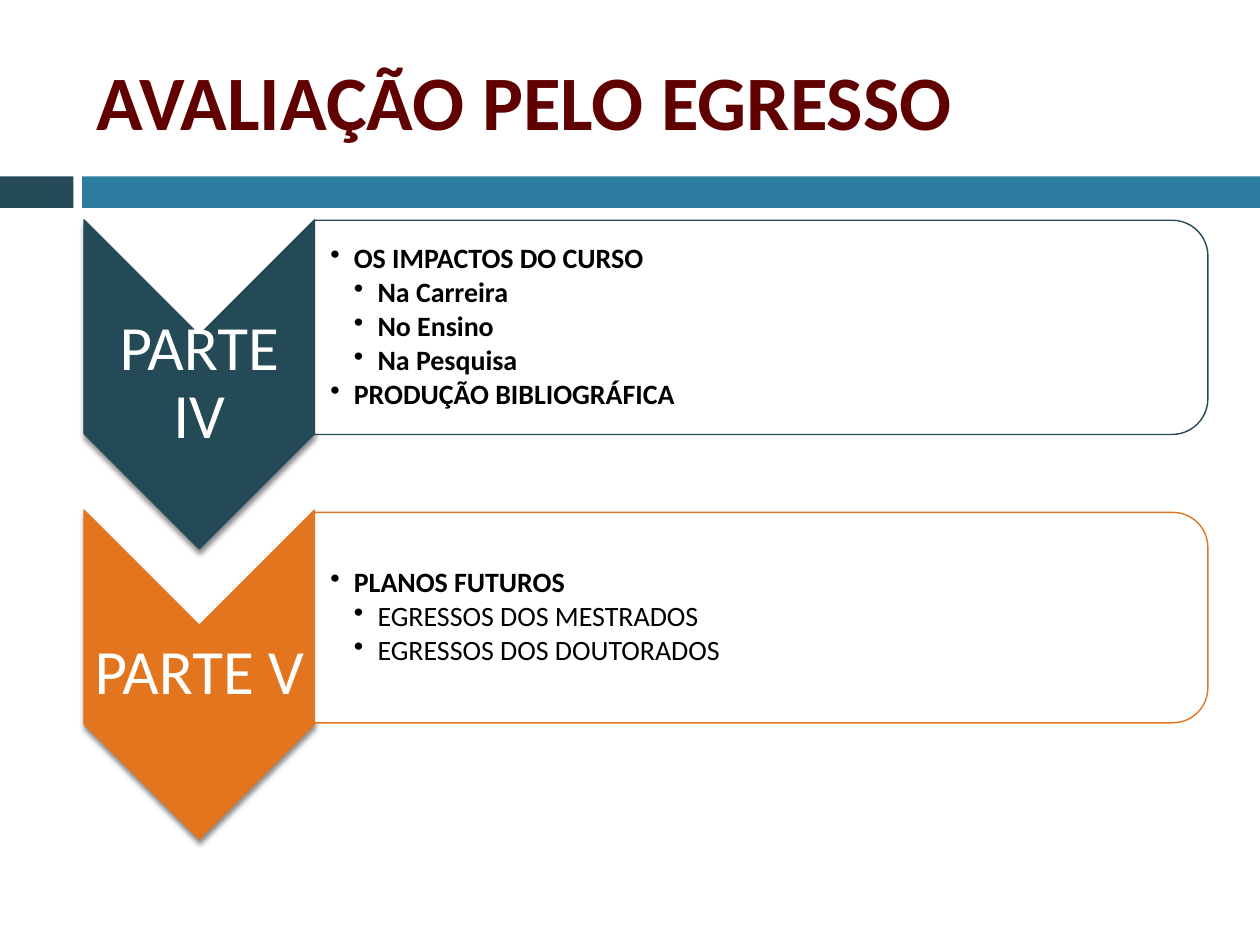
from dataclasses import dataclass

from lxml.etree import SubElement
from pptx import Presentation
from pptx.dml.color import RGBColor
from pptx.enum.shapes import MSO_SHAPE
from pptx.enum.text import MSO_ANCHOR, PP_ALIGN
from pptx.oxml.ns import qn
from pptx.util import Pt

TEAL = RGBColor(0x24, 0x4A, 0x58)
BLUE = RGBColor(0x2C, 0x7C, 0x9F)
ORANGE = RGBColor(0xE2, 0x75, 0x1D)
MAROON = RGBColor(0x60, 0x00, 0x00)
WHITE = RGBColor(0xFF, 0xFF, 0xFF)
BLACK = RGBColor(0x00, 0x00, 0x00)

FONT = "Calibri"
BULLET_INDENT = 13.5
CHEVRON_WIDTH = 131.75
CHEVRON_HEIGHT = 188
LABEL_HEIGHT = 56


@dataclass
class Box:
    left: float
    top: float
    width: float
    height: float

    def lengths(self):
        return [Pt(n) for n in (self.left, self.top, self.width, self.height)]

    def turned(self):
        """The box which covers this one after a quarter turn."""
        shift = (self.width - self.height) / 2
        return Box(self.left + shift, self.top - shift, self.height, self.width)


def add_text(para, text, size, color, bold=False, align=PP_ALIGN.LEFT,
             level=0, line=None, after=None):
    para.alignment = align
    para.level = level
    para.line_spacing = line
    if after is not None:
        para.space_after = Pt(after)
    span = para.add_run()
    span.text = text
    span.font.name = FONT
    span.font.size = Pt(size)
    span.font.bold = bold
    span.font.color.rgb = color


def add_bullet(para):
    """Hang a bullet at the indent of the paragraph's level."""
    props = para._p.get_or_add_pPr()
    props.set("marL", str(Pt(BULLET_INDENT * para.level)))
    props.set("indent", str(-Pt(BULLET_INDENT)))
    SubElement(props, qn("a:buChar"), char="•")


def add_frame(shapes, box, insets):
    frame = shapes.add_textbox(*box.lengths()).text_frame
    frame.word_wrap = True
    frame.vertical_anchor = MSO_ANCHOR.MIDDLE
    (frame.margin_left, frame.margin_top,
     frame.margin_right, frame.margin_bottom) = [Pt(n) for n in insets]
    return frame


def add_block(shapes, kind, box, fill, line=None, quarter_turn=False):
    placed = box.turned() if quarter_turn else box
    shape = shapes.add_shape(kind, *placed.lengths())
    shape.rotation = 90 if quarter_turn else 0
    shape.shadow.inherit = False
    shape.fill.solid()
    shape.fill.fore_color.rgb = fill
    if line is None:
        shape.line.fill.background()
    else:
        shape.line.color.rgb = line
        shape.line.width = Pt(0.79)
    return shape


def add_alpha(color, percent):
    SubElement(color, qn("a:alpha"), val=str(percent * 1000))


def add_shadow(shape):
    effects = shape.element.spPr.find(qn("a:effectLst"))
    shadow = SubElement(effects, qn("a:outerShdw"), blurRad=str(Pt(3)),
                        dist=str(Pt(2.4)), dir="5400000", rotWithShape="0")
    add_alpha(SubElement(shadow, qn("a:srgbClr"), val=str(BLACK)), 45)


def add_header(page, text, box):
    title = page.shapes.title
    title.left, title.top, title.width, title.height = box.lengths()
    title.text_frame.vertical_anchor = MSO_ANCHOR.MIDDLE
    add_text(title.text_frame.paragraphs[0], text, 44, MAROON, bold=True)


def add_band(page, box):
    """Place a short dark bar and a long light bar, side by side."""
    short, gap = 42, 5
    start = short + gap
    add_block(page.shapes, MSO_SHAPE.RECTANGLE,
              Box(box.left, box.top, short, box.height), TEAL)
    add_block(page.shapes, MSO_SHAPE.RECTANGLE,
              Box(box.left + start, box.top, box.width - start, box.height), BLUE)


def add_part(page, box, label, color, items, panel_drop, panel_height):
    """Place a downward chevron with its label, and a panel of bullets."""
    shapes = page.shapes.add_group_shape().shapes
    chevron_box = Box(box.left, box.top, CHEVRON_WIDTH, CHEVRON_HEIGHT)
    add_shadow(add_block(shapes, MSO_SHAPE.CHEVRON, chevron_box, color,
                         line=color, quarter_turn=True))
    label_top = box.top + (CHEVRON_HEIGHT - LABEL_HEIGHT) / 2
    frame = add_frame(shapes, Box(box.left, label_top, CHEVRON_WIDTH, LABEL_HEIGHT),
                      (2, 2, 2, 2))
    add_text(frame.paragraphs[0], label, 36, WHITE, align=PP_ALIGN.CENTER, line=0.9)

    panel_box = Box(box.left + CHEVRON_WIDTH, box.top + panel_drop,
                    box.width - CHEVRON_WIDTH, panel_height)
    panel = add_block(shapes, MSO_SHAPE.ROUND_2_SAME_RECTANGLE, panel_box, WHITE,
                      line=color, quarter_turn=True)
    add_alpha(panel.element.spPr.find(qn("a:solidFill"))[0], 90)

    inset = 6
    frame = add_frame(shapes, Box(panel_box.left, panel_box.top + inset,
                                  panel_box.width - inset,
                                  panel_height - 2 * inset),
                      (9, 0.8, 0.8, 0.8))
    for index, (level, text, bold) in enumerate(items):
        para = frame.add_paragraph() if index else frame.paragraphs[0]
        add_text(para, text, 16, BLACK, bold=bold, level=level, line=0.9, after=2.2)
        add_bullet(para)


def main():
    deck = Presentation()
    deck.slide_width, deck.slide_height = Pt(720), Pt(540)
    page = deck.slides.add_slide(deck.slide_layouts[5])

    add_band(page, Box(0, 100.8, 720, 18))
    add_header(page, "AVALIAÇÃO PELO EGRESSO", Box(48, 18, 642, 78))

    parts = [
        ("PARTE IV", TEAL, [
            (1, "OS IMPACTOS DO CURSO", True),
            (2, "Na Carreira", True),
            (2, "No Ensino", True),
            (2, "Na Pesquisa", True),
            (1, "PRODUÇÃO BIBLIOGRÁFICA", True),
        ], 0.2, 122.4),
        ("PARTE V", ORANGE, [
            (1, "PLANOS FUTUROS", True),
            (2, "EGRESSOS DOS MESTRADOS", False),
            (2, "EGRESSOS DOS DOUTORADOS", False),
        ], 1.3, 120.3),
    ]
    for index, part in enumerate(parts):
        add_part(page, Box(48, 125.7 + 165.8 * index, 642.2, CHEVRON_HEIGHT), *part)

    deck.save("out.pptx")


if __name__ == "__main__":
    main()
